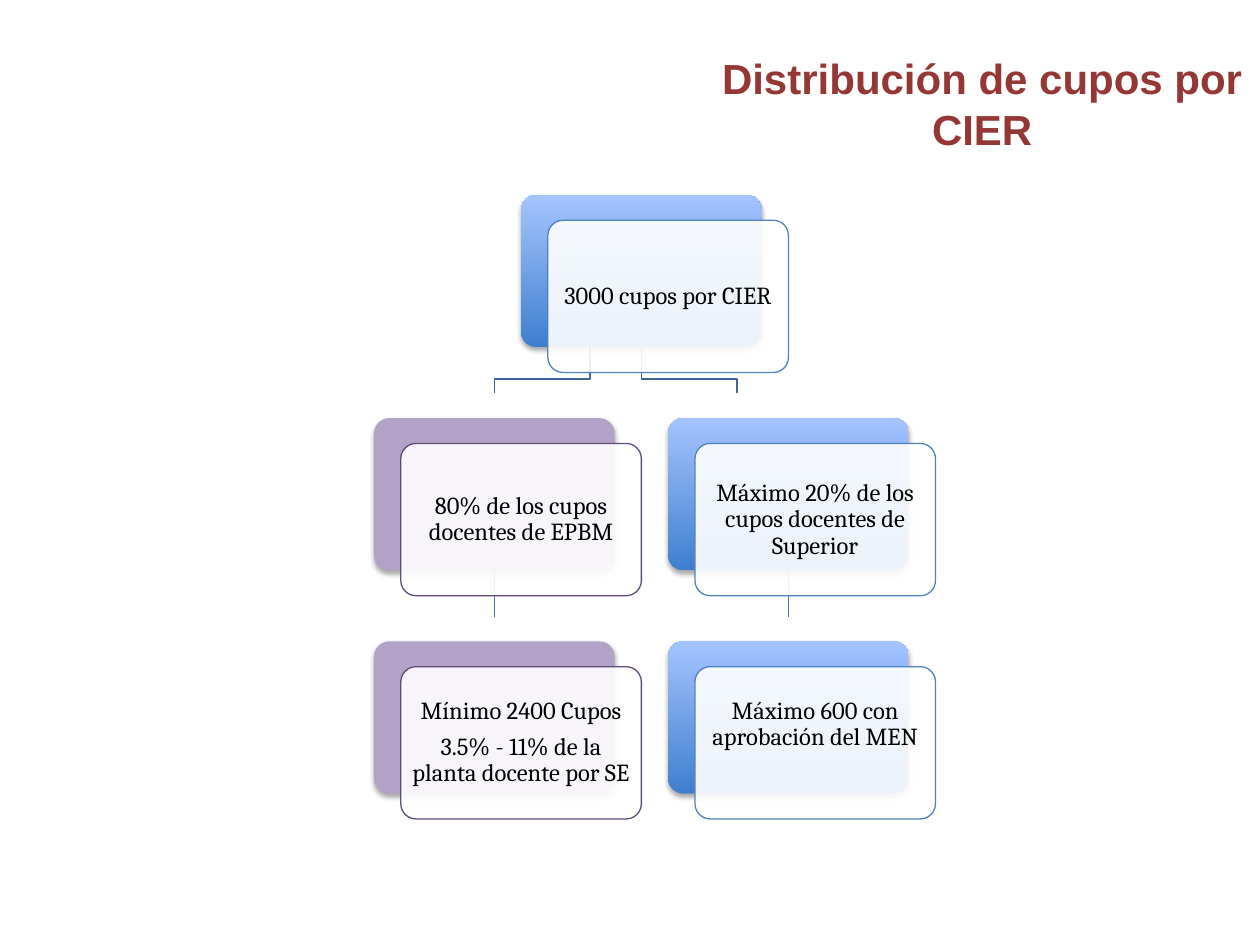
from lxml import etree
from pptx import Presentation, util as u
from pptx.dml.color import RGBColor
from pptx.enum import shapes, text
from pptx.oxml.ns import qn

TITLE_RED = RGBColor(0x95, 0x37, 0x35)
BLACK = RGBColor(0, 0, 0)
WHITE = RGBColor(0xFF, 0xFF, 0xFF)
BLUE_DARK = RGBColor(0x3F, 0x7F, 0xCE)
BLUE_LIGHT = RGBColor(0xA4, 0xC4, 0xFF)
BLUE_EDGE = RGBColor(0x4F, 0x81, 0xBD)
PURPLE = RGBColor(0xB3, 0xA2, 0xC7)
PURPLE_EDGE = RGBColor(0x60, 0x4A, 0x7B)
ELBOW_LINE = RGBColor(0x3F, 0x67, 0x97)
STEM_LINE = RGBColor(0x48, 0x75, 0xAC)

CARD_WIDTH, CARD_HEIGHT = 4.85, 3.07
COLUMN_STEP, ROW_STEP = 5.93, 4.5
FRONT_DX, FRONT_DY = 0.54, 0.51
INSET = 0.06
LINE_WIDTH = u.Pt(0.75)

BLUE = {"fill": (BLUE_DARK, BLUE_LIGHT), "edge": BLUE_EDGE}
LILAC = {"fill": (PURPLE,), "edge": PURPLE_EDGE}

CARDS = [
    {"column": 0.5, "row": 0, "style": BLUE, "lines": ["3000 cupos por CIER"]},
    {"column": 0, "row": 1, "style": LILAC, "lines": ["80% de los cupos docentes de EPBM"]},
    {"column": 0, "row": 2, "style": LILAC,
     "lines": ["Mínimo 2400 Cupos", "3.5% - 11% de la planta docente por SE"]},
    {"column": 1, "row": 1, "style": BLUE, "lines": ["Máximo 20% de los cupos docentes de Superior"]},
    {"column": 1, "row": 2, "style": BLUE, "lines": ["Máximo 600 con aprobación del MEN"], "lift": 0.73},
]


def apply(target, values):
    for name, value in values.items():
        setattr(target, name, value)


def write(frame, lines, paragraph_format, font_format):
    for index, line in enumerate(lines):
        paragraph = frame.paragraphs[0] if index == 0 else frame.add_paragraph()
        paragraph.text = line
        apply(paragraph, {"alignment": text.PP_ALIGN.CENTER, **paragraph_format})
        color = font_format["color"]
        apply(paragraph.font, {key: value for key, value in font_format.items() if key != "color"})
        paragraph.font.color.rgb = color


def add_title(slide, left, top, width, height):
    box = slide.shapes.add_textbox(u.Cm(left), u.Cm(top), u.Cm(width), u.Cm(height))
    apply(box.text_frame, {"word_wrap": True, "auto_size": text.MSO_AUTO_SIZE.SHAPE_TO_FIT_TEXT})
    write(box.text_frame, ["Distribución de cupos por CIER"], {},
          {"name": "Arial", "size": u.Pt(24), "bold": True, "color": TITLE_RED})


def add_rounded(slide, left, top):
    shape = slide.shapes.add_shape(shapes.MSO_SHAPE.ROUNDED_RECTANGLE, u.Cm(left), u.Cm(top),
                                   u.Cm(CARD_WIDTH), u.Cm(CARD_HEIGHT))
    shape.adjustments[0] = 0.1
    shape.shadow.inherit = False
    return shape


def add_back(slide, left, top, style):
    shape = add_rounded(slide, left, top)
    colors = style["fill"]
    if len(colors) == 1:
        shape.fill.solid()
        shape.fill.fore_color.rgb = colors[0]
    else:
        shape.fill.gradient()
        shape.fill.gradient_angle = 90
        for stop, color in zip(shape.fill.gradient_stops, colors):
            stop.color.rgb = color
    shape.line.fill.background()
    effects = shape._element.spPr.find(qn("a:effectLst"))
    shadow = etree.SubElement(effects, qn("a:outerShdw"), blurRad="40000", dist="23000",
                              dir="5400000", rotWithShape="0")
    color = etree.SubElement(shadow, qn("a:srgbClr"), val=str(BLACK))
    etree.SubElement(color, qn("a:alpha"), val="35000")
    return shape


def add_front(slide, left, top, card):
    shape = add_rounded(slide, left + FRONT_DX, top + FRONT_DY)
    shape.fill.solid()
    shape.fill.fore_color.rgb = WHITE
    color = shape._element.spPr.find(qn("a:solidFill"))[0]
    etree.SubElement(color, qn("a:alpha"), val="90000")
    shape.line.color.rgb = card["style"]["edge"]
    shape.line.width = LINE_WIDTH
    apply(shape.text_frame, {
        "word_wrap": True,
        "vertical_anchor": text.MSO_ANCHOR.MIDDLE,
        "margin_left": u.Cm(INSET),
        "margin_right": u.Cm(INSET),
        "margin_top": u.Cm(INSET),
        "margin_bottom": u.Cm(INSET + card.get("lift", 0)),
    })
    write(shape.text_frame, card["lines"], {"line_spacing": 0.9, "space_after": u.Pt(5)},
          {"name": "Cambria", "size": u.Pt(14), "color": BLACK})


def add_elbow(slide, left, top, run):
    points = [(left, top), (left, top + 0.64), (left + run, top + 0.64), (left + run, top + 0.92)]
    start, *rest = [(u.Cm(x), u.Cm(y)) for x, y in points]
    builder = slide.shapes.build_freeform(*start)
    builder.add_line_segments(rest, close=False)
    shape = builder.convert_to_shape()
    shape.shadow.inherit = False
    shape.fill.background()
    shape.line.color.rgb = ELBOW_LINE
    shape.line.width = LINE_WIDTH


def add_stem(slide, left, top, card_shape):
    stem = slide.shapes.add_connector(shapes.MSO_CONNECTOR.STRAIGHT, u.Cm(left), u.Cm(top),
                                      u.Cm(left), u.Cm(top + 0.94))
    stem.begin_connect(card_shape, 2)
    stem.end_x = stem.begin_x
    stem.line.color.rgb = STEM_LINE
    stem.line.width = LINE_WIDTH
    etree.SubElement(stem._element.spPr, qn("a:effectLst"))


def add_hierarchy(slide, left, top):
    places = [(left + card["column"] * COLUMN_STEP, top + card["row"] * ROW_STEP) for card in CARDS]
    backs = [add_back(slide, *place, card["style"]) for place, card in zip(places, CARDS)]

    middle = left + CARD_WIDTH / 2
    run = 1.93
    add_elbow(slide, middle + run, top + CARD_HEIGHT, -run)
    add_elbow(slide, middle + COLUMN_STEP / 2, top + CARD_HEIGHT, run)
    for card, (x, y), back in zip(CARDS, places, backs):
        if card["row"] == 1:
            add_stem(slide, x + CARD_WIDTH / 2, y + CARD_HEIGHT, back)

    for card, place in zip(CARDS, places):
        add_front(slide, *place, card)


def main():
    presentation = Presentation()
    apply(presentation, {"slide_width": u.Cm(25.4), "slide_height": u.Cm(19.05)})
    slide = presentation.slides.add_slide(presentation.slide_layouts[6])
    add_title(slide, 14.3, 0.94, 11, 2.31)
    add_hierarchy(slide, 7.54, 3.93)
    presentation.save("out.pptx")


if __name__ == "__main__":
    main()
